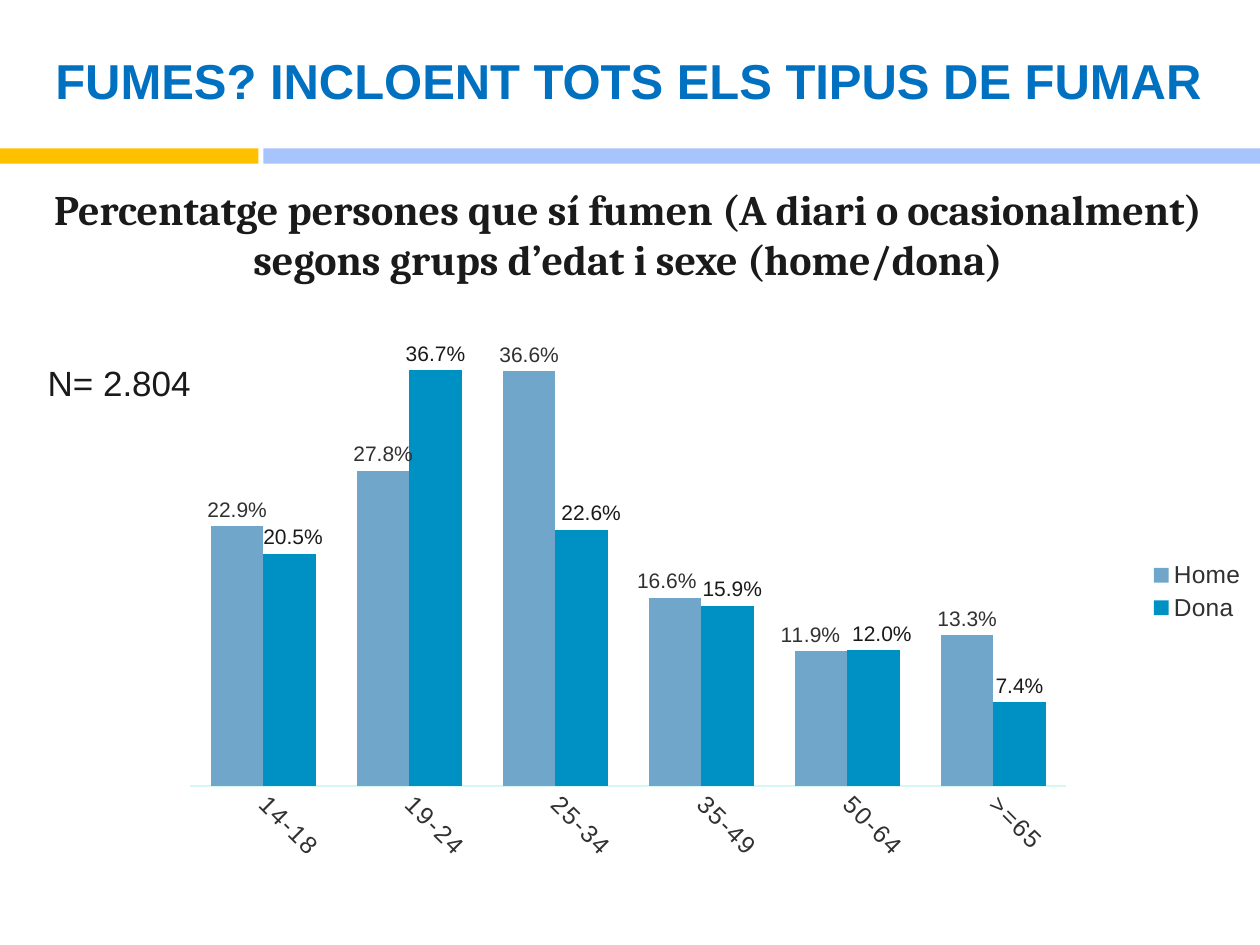
"""Build a slide on smoking rates by age group and sex."""
import dataclasses

import lxml.etree
import pptx
import pptx.chart.data
import pptx.dml.color
import pptx.enum.chart
import pptx.enum.shapes
import pptx.enum.text
import pptx.oxml
import pptx.oxml.ns
import pptx.util

Cm = pptx.util.Cm
Pt = pptx.util.Pt
qn = pptx.oxml.ns.qn


@dataclasses.dataclass(frozen=True)
class Theme:
    sans: str = "Arial"
    serif: str = "Cambria"
    title: str = "0070C0"
    ink: str = "1A1A1A"
    soft_ink: str = "313131"
    gold: str = "FFC000"
    periwinkle: str = "A8C4FC"
    white: str = "FFFFFF"
    axis: str = "D5F8F3"
    title_size: int = 28
    subtitle_size: int = 24
    sample_size: int = 20
    axis_size: int = 14
    label_size: int = 12


THEME = Theme()

TITLE = ["FUMES? INCLOENT TOTS ELS TIPUS DE FUMAR"]
SUBTITLE = [
    "Percentatge persones que sí fumen (A diari o ocasionalment)",
    "segons grups d’edat i sexe (home/dona)",
]
SAMPLE = ["N= 2.804"]
BANDS = [(0, 5.21, THEME.gold), (5.31, 20.09, THEME.periwinkle)]
AGE_GROUPS = ["14-18", "19-24", "25-34", "35-49", "50-64", ">=65"]
SEXES = [
    {
        "name": "Home",
        "rates": [0.229, 0.278, 0.366, 0.166, 0.119, 0.133],
        "fill": "70A6CA",
        "ink": THEME.soft_ink,
        "nudges": {3: -0.007, 4: -0.009},
    },
    {
        "name": "Dona",
        "rates": [0.205, 0.367, 0.226, 0.159, 0.12, 0.074],
        "fill": "0091C4",
        "ink": THEME.ink,
        "nudges": {0: 0.003, 2: 0.008, 3: 0.004, 4: 0.007},
    },
]
PLOT_AREA = {"x": 0.112, "y": 0.09, "w": 0.728, "h": 0.718}
RATE_FORMAT = "0.0%"


def rgb(value):
    return pptx.dml.color.RGBColor.from_string(value)


def style_font(font, size, color, face=THEME.sans, bold=False):
    font.name, font.size, font.bold = face, Pt(size), bold
    font.color.rgb = rgb(color)


def add_block(slide, box, fill):
    block = slide.shapes.add_shape(
        pptx.enum.shapes.MSO_SHAPE.RECTANGLE, *map(Cm, box))
    block.shadow.inherit = False
    block.fill.solid()
    block.fill.fore_color.rgb = rgb(fill)
    block.line.fill.background()
    return block


def write(holder, lines, *, align="LEFT", anchor="TOP", inset=0.13, **style):
    frame = holder.text_frame
    frame.word_wrap = True
    frame.vertical_anchor = getattr(pptx.enum.text.MSO_ANCHOR, anchor)
    frame.margin_left = frame.margin_right = Cm(0.25)
    frame.margin_top = frame.margin_bottom = Cm(inset)
    for number, line in enumerate(lines):
        paragraph = frame.add_paragraph() if number else frame.paragraphs[0]
        paragraph.alignment = getattr(pptx.enum.text.PP_ALIGN, align)
        run = paragraph.add_run()
        run.text = line
        style_font(run.font, **style)


def manual_layout(places, inner=False):
    layout = pptx.oxml.parse_xml(
        f'<c:layout xmlns:c="{pptx.oxml.ns.nsuri("c")}"><c:manualLayout/></c:layout>')
    settings = [("layoutTarget", "inner")] if inner else []
    if inner:
        settings += [("xMode", "edge"), ("yMode", "edge")]
    for tag, value in settings + list(places.items()):
        lxml.etree.SubElement(layout[0], qn(f"c:{tag}")).set("val", str(value))
    return layout


def style_series(series, sex):
    outside = pptx.enum.chart.XL_LABEL_POSITION.OUTSIDE_END
    series.format.fill.solid()
    series.format.fill.fore_color.rgb = rgb(sex["fill"])
    series.invert_if_negative = False
    labels = series.data_labels
    labels.show_value = True
    labels.position = outside
    labels.number_format = RATE_FORMAT
    labels.number_format_is_linked = False
    style_font(labels.font, THEME.label_size, sex["ink"])
    for index, shift in sex["nudges"].items():
        label = series.points[index].data_label
        label.position = outside
        style_font(label.font, THEME.label_size, sex["ink"])
        element = labels._element.xpath(f'c:dLbl[c:idx/@val="{index}"]')[0]
        number_format = lxml.etree.Element(qn("c:numFmt"))
        number_format.set("formatCode", RATE_FORMAT)
        number_format.set("sourceLinked", "0")
        element.insert(1, manual_layout({"x": shift, "y": 0}))
        element.insert(2, number_format)


def add_rates_chart(slide, box):
    rates = pptx.chart.data.CategoryChartData(number_format=RATE_FORMAT)
    rates.categories = AGE_GROUPS
    for sex in SEXES:
        rates.add_series(sex["name"], sex["rates"])
    chart = slide.shapes.add_chart(
        pptx.enum.chart.XL_CHART_TYPE.COLUMN_CLUSTERED, *map(Cm, box), rates).chart
    chart.has_title = False
    style_font(chart.font, THEME.axis_size, THEME.soft_ink)
    chart.has_legend = True
    chart.legend.position = pptx.enum.chart.XL_LEGEND_POSITION.RIGHT
    chart.legend.include_in_layout = False
    style_font(chart.legend.font, THEME.axis_size, THEME.soft_ink)

    plot = chart.plots[0]
    plot.vary_by_categories = False
    plot.gap_width, plot.overlap = 79, 0
    for series, sex in zip(plot.series, SEXES):
        style_series(series, sex)

    heights = chart.value_axis
    heights.minimum_scale, heights.maximum_scale = 0, 0.4
    heights.has_major_gridlines = False
    heights.visible = False
    ages = chart.category_axis
    ages.major_tick_mark = pptx.enum.chart.XL_TICK_MARK.NONE
    ages.format.line.color.rgb = rgb(THEME.axis)
    ages.format.line.width = Pt(0.75)
    style_font(ages.tick_labels.font, THEME.axis_size, THEME.soft_ink)
    ages._element.xpath("c:txPr/a:bodyPr")[0].set("rot", "2700000")
    ages._element.xpath("c:txPr//a:defRPr")[0].set("spc", "100")

    area = chart._chartSpace.xpath("c:chart/c:plotArea")[0]
    for layout in area.findall(qn("c:layout")):
        area.remove(layout)
    area.insert(0, manual_layout(PLOT_AREA, inner=True))


def main():
    deck = pptx.Presentation()
    deck.slide_width, deck.slide_height = Cm(25.4), Cm(19.05)
    slide = deck.slides.add_slide(deck.slide_layouts[6])
    for left, width, fill in BANDS:
        add_block(slide, (left, 2.99, width, 0.31), fill)
    subtitle = add_block(slide, (0, 3.45, 25.32, 2.57), THEME.white)
    write(subtitle, SUBTITLE, align="CENTER", inset=0.25, face=THEME.serif,
          size=THEME.subtitle_size, color=THEME.ink, bold=True)
    add_rates_chart(slide, (1.12, 5.56, 24.26, 12.73))
    title = slide.shapes.add_textbox(Cm(-0.03), Cm(0.72), Cm(25.4), Cm(1.78))
    write(title, TITLE, align="CENTER", anchor="MIDDLE",
          size=THEME.title_size, color=THEME.title, bold=True)
    sample = slide.shapes.add_textbox(Cm(0.71), Cm(7.16), Cm(3.84), Cm(1.12))
    write(sample, SAMPLE, size=THEME.sample_size, color=THEME.ink)
    deck.save("out.pptx")


if __name__ == "__main__":
    main()
